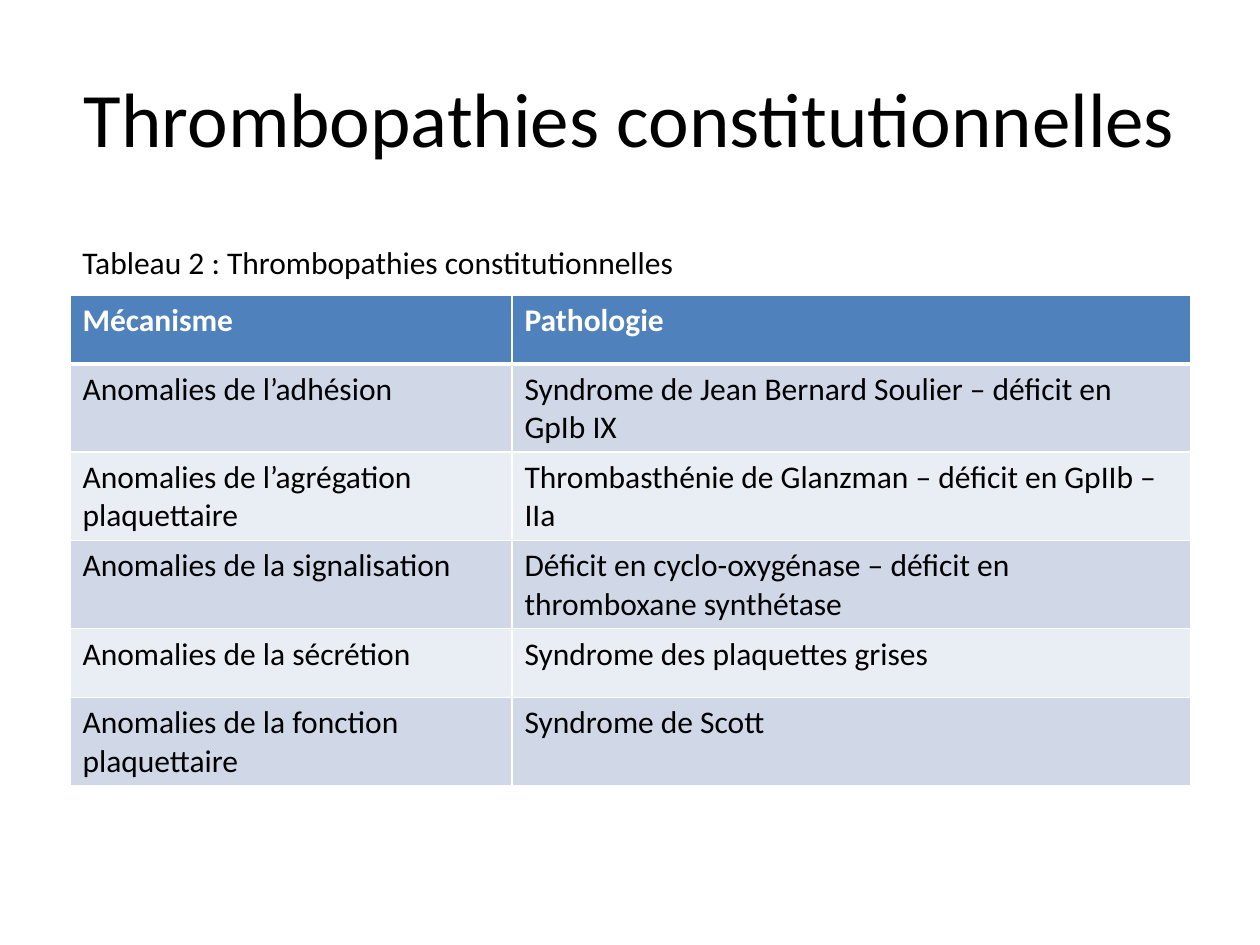
"""Build the slide on constitutional thrombopathies."""
from lxml.etree import SubElement
from pptx import Presentation
from pptx.dml.color import RGBColor
from pptx.enum.text import MSO_ANCHOR, PP_ALIGN
from pptx.oxml.ns import qn
from pptx.util import Pt

PX_PER_INCH = 126
FONT = "Calibri"
WHITE = RGBColor(0xFF, 0xFF, 0xFF)
BLACK = RGBColor(0, 0, 0)
HEADER_BLUE = RGBColor(0x4F, 0x81, 0xBD)
BANDS = (RGBColor(0xD0, 0xD8, 0xE8), RGBColor(0xE9, 0xED, 0xF4))

COLUMN_WIDTHS = (442, 679)
ROW_HEIGHT = 69
DISORDERS = (
    ("Mécanisme", "Pathologie"),
    ("Anomalies de l’adhésion", "Syndrome de Jean Bernard Soulier – déficit en GpIb IX"),
    ("Anomalies de l’agrégation plaquettaire", "Thrombasthénie de Glanzman – déficit en GpIIb – IIa"),
    ("Anomalies de la signalisation", "Déficit en cyclo-oxygénase – déficit en thromboxane synthétase"),
    ("Anomalies de la sécrétion", "Syndrome des plaquettes grises"),
    ("Anomalies de la fonction plaquettaire", "Syndrome de Scott"),
)


def px(length):
    return round(length * 914400 / PX_PER_INCH)


def write(frame, text, size, color=BLACK, bold=False, align=PP_ALIGN.LEFT):
    frame.text = text
    paragraph = frame.paragraphs[0]
    paragraph.alignment = align
    font = paragraph.runs[0].font
    font.name, font.size, font.bold = FONT, Pt(size), bold
    font.color.rgb = color


def add_label(slide, box, text, size, align=PP_ALIGN.LEFT):
    frame = slide.shapes.add_textbox(*map(px, box)).text_frame
    frame.word_wrap = True
    frame.vertical_anchor = MSO_ANCHOR.MIDDLE
    write(frame, text, size, align=align)


def set_borders(cell, bottom_width):
    properties = cell._tc.get_or_add_tcPr()
    for side, width in (("L", 1), ("R", 1), ("T", 1), ("B", bottom_width)):
        line = SubElement(properties, qn(f"a:ln{side}"), w=str(Pt(width)))
        fill = SubElement(line, qn("a:solidFill"))
        SubElement(fill, qn("a:srgbClr"), val=str(WHITE))


def add_disorder_table(slide, left, top):
    size = sum(COLUMN_WIDTHS), ROW_HEIGHT * len(DISORDERS)
    table = slide.shapes.add_table(
        len(DISORDERS), len(COLUMN_WIDTHS), *map(px, (left, top, *size))
    ).table
    for column, width in zip(table.columns, COLUMN_WIDTHS):
        column.width = px(width)
    for row_index, entries in enumerate(DISORDERS):
        header = row_index == 0
        for column_index, entry in enumerate(entries):
            cell = table.cell(row_index, column_index)
            write(cell.text_frame, entry, 18, WHITE if header else BLACK, header)
            set_borders(cell, 3 if header else 1)
            cell.fill.solid()
            cell.fill.fore_color.rgb = HEADER_BLUE if header else BANDS[(row_index - 1) % 2]


def main():
    presentation = Presentation()
    presentation.slide_width, presentation.slide_height = px(1260), px(945)
    slide = presentation.slides.add_slide(presentation.slide_layouts[6])
    add_label(slide, (63, 38, 1134, 158), "Thrombopathies constitutionnelles", 44, PP_ALIGN.CENTER)
    add_disorder_table(slide, 70, 295)
    add_label(slide, (70, 236, 1190, 51), "Tableau 2 : Thrombopathies constitutionnelles", 18)
    presentation.save("out.pptx")


if __name__ == "__main__":
    main()
